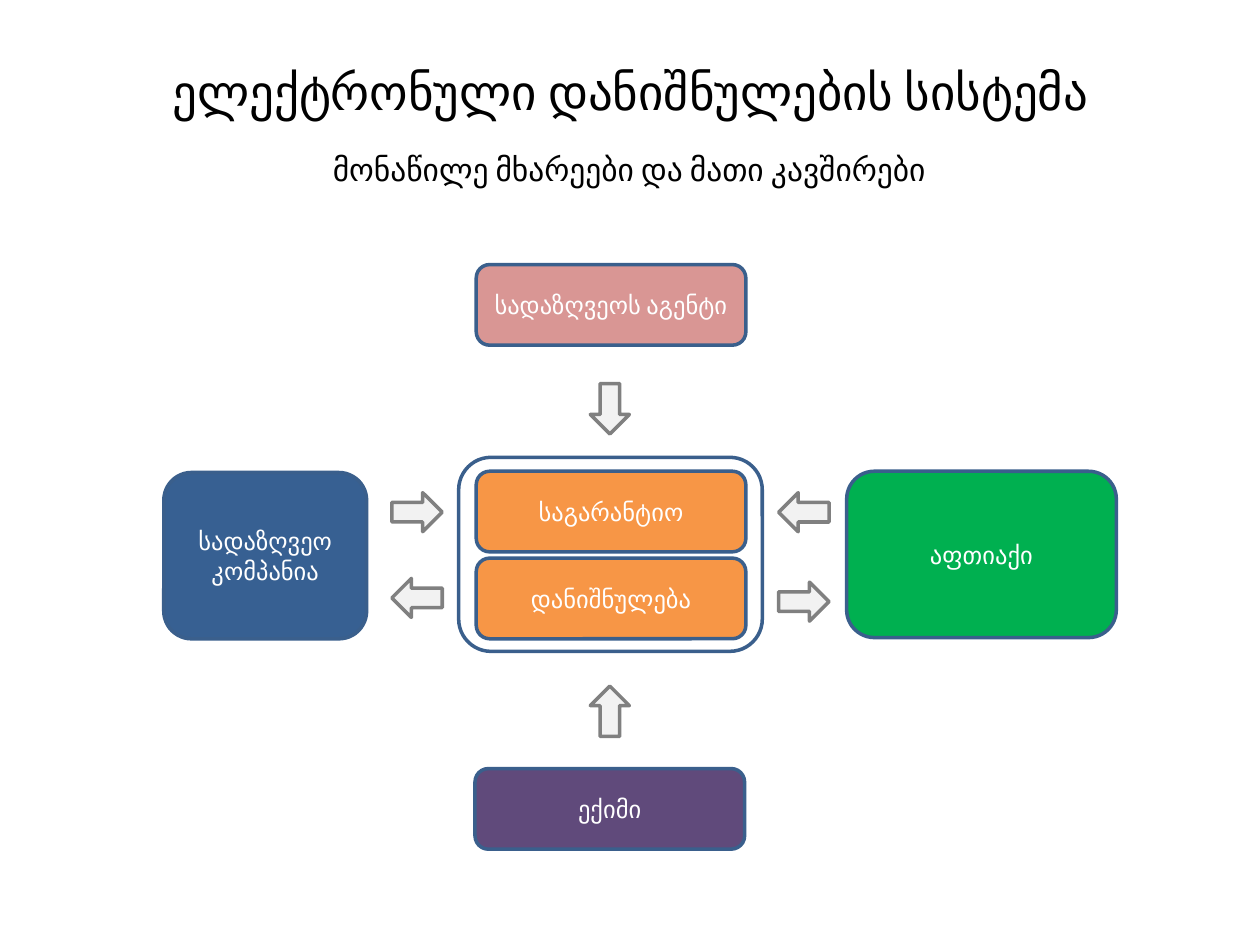
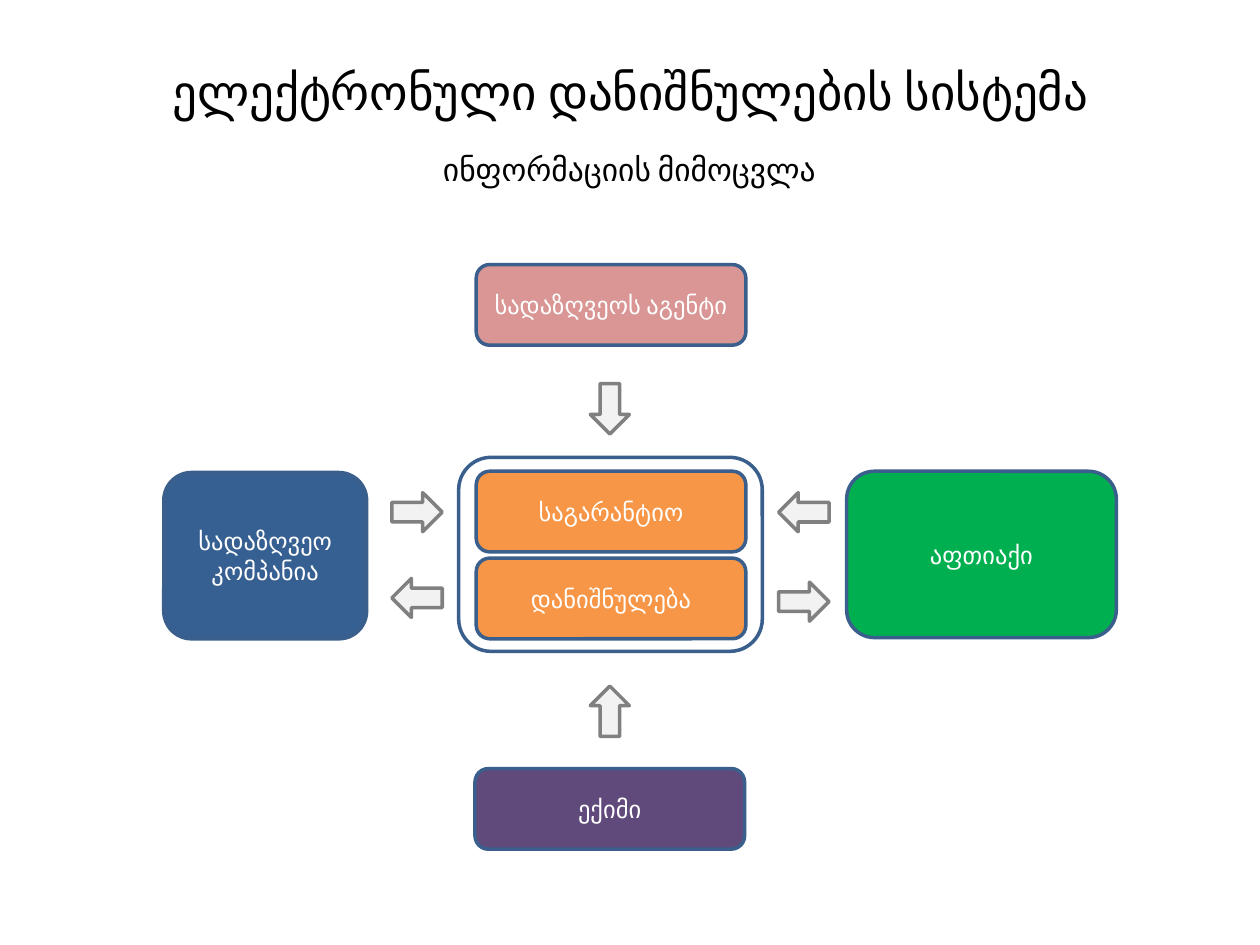
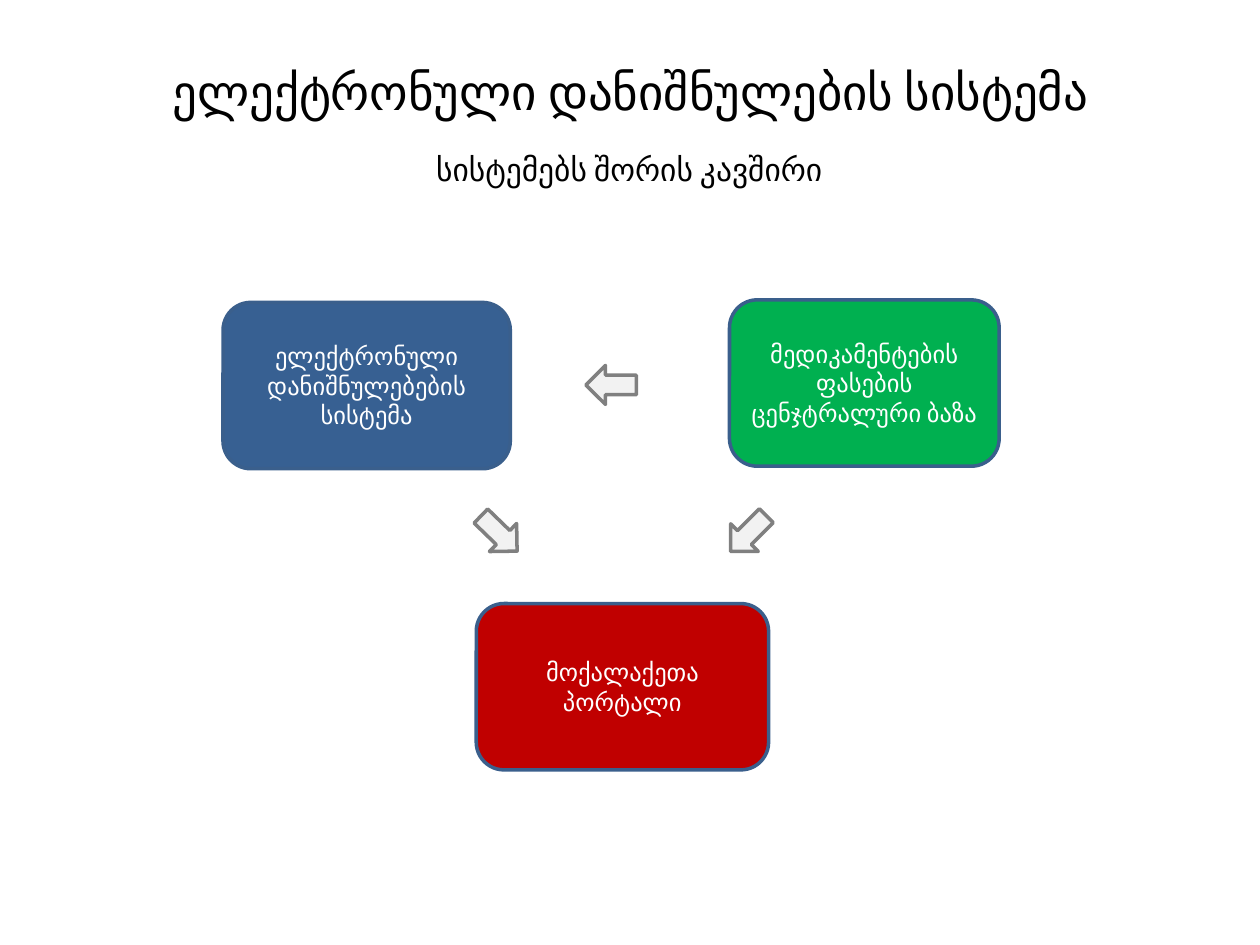
from dataclasses import dataclass

from pptx import Presentation
from pptx.dml.color import RGBColor
from pptx.enum.shapes import MSO_SHAPE
from pptx.enum.text import MSO_ANCHOR, MSO_AUTO_SIZE, PP_ALIGN
from pptx.util import Pt

ROUND = MSO_SHAPE.ROUNDED_RECTANGLE
ARROW = MSO_SHAPE.RIGHT_ARROW
TOP = MSO_ANCHOR.TOP
MIDDLE = MSO_ANCHOR.MIDDLE
CENTER = PP_ALIGN.CENTER
GROW = MSO_AUTO_SIZE.SHAPE_TO_FIT_TEXT
FIXED = MSO_AUTO_SIZE.NONE
SCALE = 9144
TITLE_ONLY = 5


@dataclass(frozen=True)
class Theme:
    font: str = "Calibri"
    title: int = 28
    sub: int = 18
    label: int = 14
    line: int = 2
    ink: str = "000000"
    white: str = "FFFFFF"
    edge: str = "3A5F8C"
    blue: str = "376092"
    green: str = "00B050"
    orange: str = "F79646"
    purple: str = "604A7B"
    pink: str = "D99694"
    red: str = "C00000"
    pale: str = "F2F2F2"
    gray: str = "808080"


THEME = Theme()


def px(*sizes):
    return [size * SCALE for size in sizes]


def write(frame, text, size, color, anchor=MIDDLE, fit=FIXED):
    frame.text = text
    frame.word_wrap = True
    frame.auto_size = fit
    frame.vertical_anchor = anchor
    for para in frame.paragraphs:
        para.alignment = CENTER
        for run in para.runs:
            run.font.name = THEME.font
            run.font.size = Pt(size)
            run.font.color.rgb = RGBColor.from_string(color)


class Deck:
    def __init__(self, theme):
        self.theme = theme
        self.file = Presentation()
        self.file.slide_width, self.file.slide_height = px(1000, 750)
        self.slide = None

    def start(self, title, sub):
        self.slide = self.file.slides.add_slide(self.file.slide_layouts[TITLE_ONLY])
        head = self.slide.shapes.title
        head.left, head.top, head.width, head.height = px(1, 44, 999, 57)
        write(head.text_frame, title, self.theme.title, self.theme.ink, TOP, GROW)
        note = self.slide.shapes.add_textbox(*px(0, 114, 999, 40))
        write(note.text_frame, sub, self.theme.sub, self.theme.ink, TOP, GROW)

    def shape(self, kind, area, fill, line):
        item = self.slide.shapes.add_shape(kind, *px(*area))
        item.shadow.inherit = False
        item.fill.solid()
        item.fill.fore_color.rgb = RGBColor.from_string(fill)
        item.line.color.rgb = RGBColor.from_string(line)
        item.line.width = Pt(self.theme.line)
        return item

    def box(self, area, fill, text=""):
        item = self.shape(ROUND, area, fill, self.theme.edge)
        if text:
            write(item.text_frame, text, self.theme.label, self.theme.white)

    def arrow(self, left, top, turn=0):
        area = (left, top, 40, 31)
        item = self.shape(ARROW, area, self.theme.pale, self.theme.gray)
        item.rotation = turn


def draw_parties(deck):
    theme = deck.theme
    deck.box((364, 363, 241, 154), theme.white)
    for left, top, fill, text in (
        (378, 374, theme.orange, "საგარანტიო"),
        (378, 443, theme.orange, "დანიშნულება"),
        (377, 610, theme.purple, "ექიმი"),
        (378, 210, theme.pink, "სადაზღვეოს აგენტი"),
    ):
        deck.box((left, top, 214, 64), fill, text)
    deck.box((130, 375, 161, 132), theme.blue, "სადაზღვეო კომპანია")
    deck.box((672, 374, 214, 132), theme.green, "აფთიაქი")
    for left, top, turn in (
        (311, 391, 0),
        (311, 459, 180),
        (464, 549, 270),
        (464, 309, 90),
        (618, 391, 180),
        (618, 462, 0),
    ):
        deck.arrow(left, top, turn)


def draw_systems(deck):
    theme = deck.theme
    deck.box((177, 240, 228, 132), theme.blue, "ელექტრონული დანიშნულებების სისტემა")
    deck.box((579, 238, 214, 132), theme.green, "მედიკამენტების ფასების\nცენჯტრალური ბაზა")
    deck.box((378, 479, 232, 132), theme.red, "მოქალაქეთა პორტალი")
    deck.arrow(465, 290, 180)
    deck.arrow(376, 408, 44.1)
    deck.arrow(574, 408, 135)


def main():
    deck = Deck(THEME)
    for sub, draw in (
        ("მონაწილე მხარეები და მათი კავშირები", draw_parties),
        ("ინფორმაციის მიმოცვლა", draw_parties),
        ("სისტემებს შორის კავშირი", draw_systems),
    ):
        deck.start("ელექტრონული დანიშნულების სისტემა", sub)
        draw(deck)
    deck.file.save("out.pptx")


if __name__ == "__main__":
    main()
